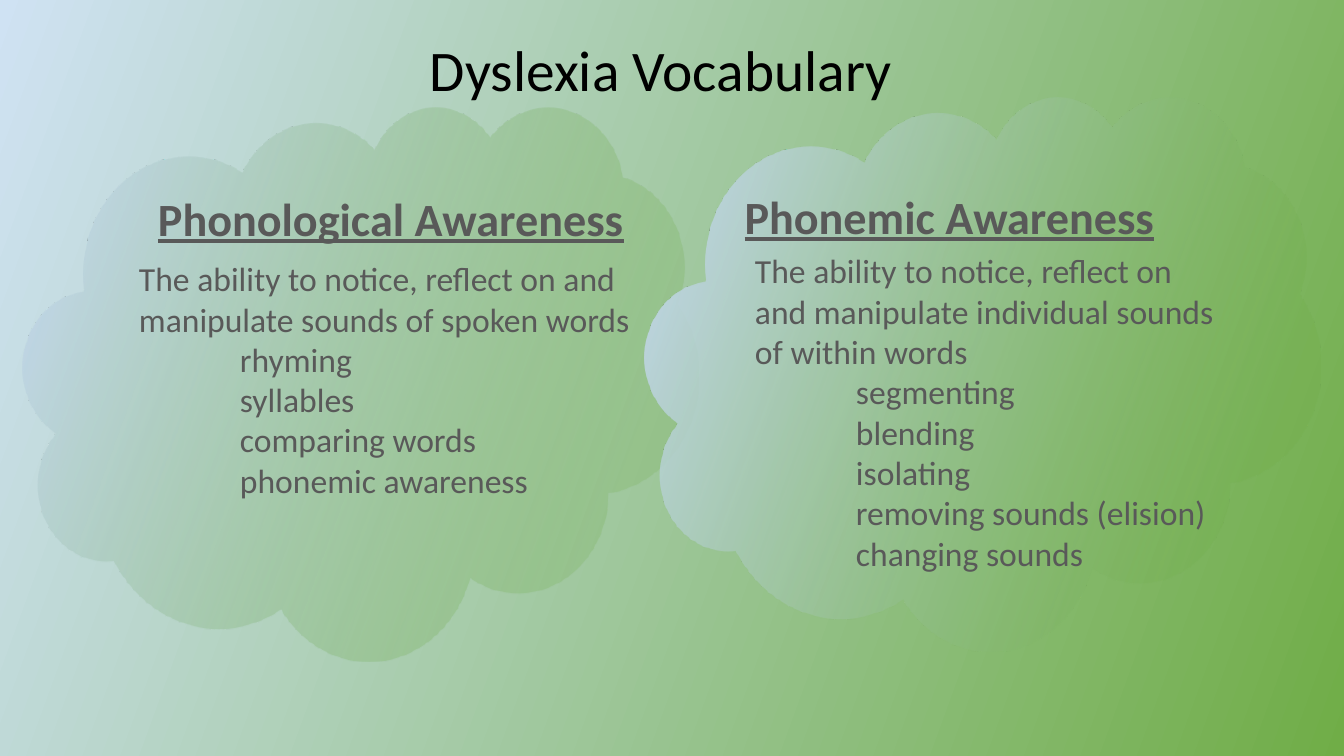
from lxml import etree
from pptx import Presentation
from pptx.dml.color import RGBColor
from pptx.enum.shapes import MSO_SHAPE
from pptx.enum.text import MSO_ANCHOR, PP_ALIGN
from pptx.oxml.ns import qn
from pptx.util import Emu, Pt

CLOUD = MSO_SHAPE.CLOUD
TOP, MIDDLE = MSO_ANCHOR.TOP, MSO_ANCHOR.MIDDLE
LEFT, CENTER = PP_ALIGN.LEFT, PP_ALIGN.CENTER
PX = 914400 / 100.8
INDENT = 101
COLORS = {"green": "70AD47", "sky": "CFE2F3", "blue": "C9DAF8",
          "pale": "D9E4F8", "title": "000000", "text": "595959"}


def px(*values):
    return [Emu(round(v * PX)) for v in values]


def add_text(box, lines, size, color="text", bold=False, underline=False,
             align=LEFT, anchor=TOP, spacing=None):
    """Add a text box; lines holds (text, indent level) pairs."""
    tf = slide.shapes.add_textbox(*px(*box)).text_frame
    tf.word_wrap = True
    tf.vertical_anchor = anchor
    tf.margin_left, tf.margin_top, tf.margin_right, tf.margin_bottom = px(10, 10, 10, 10)
    for i, (text, level) in enumerate(lines):
        p = tf.add_paragraph() if i else tf.paragraphs[0]
        p.alignment = align
        if spacing:
            p.line_spacing = spacing
        if level:
            p._p.get_or_add_pPr().set("marL", str(px(INDENT * level)[0]))
        r = p.add_run()
        r.text = text
        r.font.name = "Calibri"
        r.font.size = Pt(size)
        r.font.bold = bold
        r.font.underline = underline
        r.font.color.rgb = RGBColor.from_string(COLORS[color])


prs = Presentation()
prs.slide_width, prs.slide_height = px(1344, 756)
slide = prs.slides.add_slide(prs.slide_layouts[6])

# Background and clouds: gradients with (position %, colour, opacity %) stops
sky_stops = [(0, "green", 20), (100, "sky", 100)]
cloud_stops = [(0, "green", 20), (16, "green", 20), (100, "blue", 100), (100, "pale", 100)]
gradients = [(slide.background.fill, slide.element, sky_stops)]
for left, top in [(23, 106), (645, 96)]:
    sp = slide.shapes.add_shape(CLOUD, *px(left, top, 675, 553))
    sp.shadow.inherit = False
    sp.line.fill.background()
    gradients.append((sp.fill, sp.element, cloud_stops))

for fill, element, stops in gradients:
    fill.gradient()
    fill.gradient_angle = 160
    stop_list = next(element.iter(qn("a:gsLst")))
    for old in list(stop_list):
        stop_list.remove(old)
    for pos, color, opacity in stops:
        gs = etree.SubElement(stop_list, qn("a:gs"), pos=str(pos * 1000))
        clr = etree.SubElement(gs, qn("a:srgbClr"), val=COLORS[color])
        if opacity < 100:
            etree.SubElement(clr, qn("a:alpha"), val=str(opacity * 1000))

# Title
add_text((214, 32, 894, 78), [("Dyslexia Vocabulary", 0)], 41, color="title",
         align=CENTER, spacing=0.9)

# Headings and definitions
terms = [
    ("Phonological Awareness", (148, 180, 514, 78), LEFT,
     "The ability to notice, reflect on and manipulate sounds of spoken words",
     ["rhyming", "syllables", "comparing words", "phonemic awareness"],
     (129, 191, 552, 376)),
    ("Phonemic Awareness", (716, 178, 467, 77), CENTER,
     "The ability to notice, reflect on and manipulate individual sounds of within words",
     ["segmenting", "blending", "isolating", "removing sounds (elision)", "changing sounds"],
     (745, 269, 487, 285)),
]
for heading, heading_box, align, definition, skills, body_box in terms:
    add_text(heading_box, [(heading, 0)], 33, bold=True, underline=True, align=align)
    add_text(body_box, [(definition, 0)] + [(skill, 1) for skill in skills], 24, anchor=MIDDLE)

prs.save("out.pptx")
